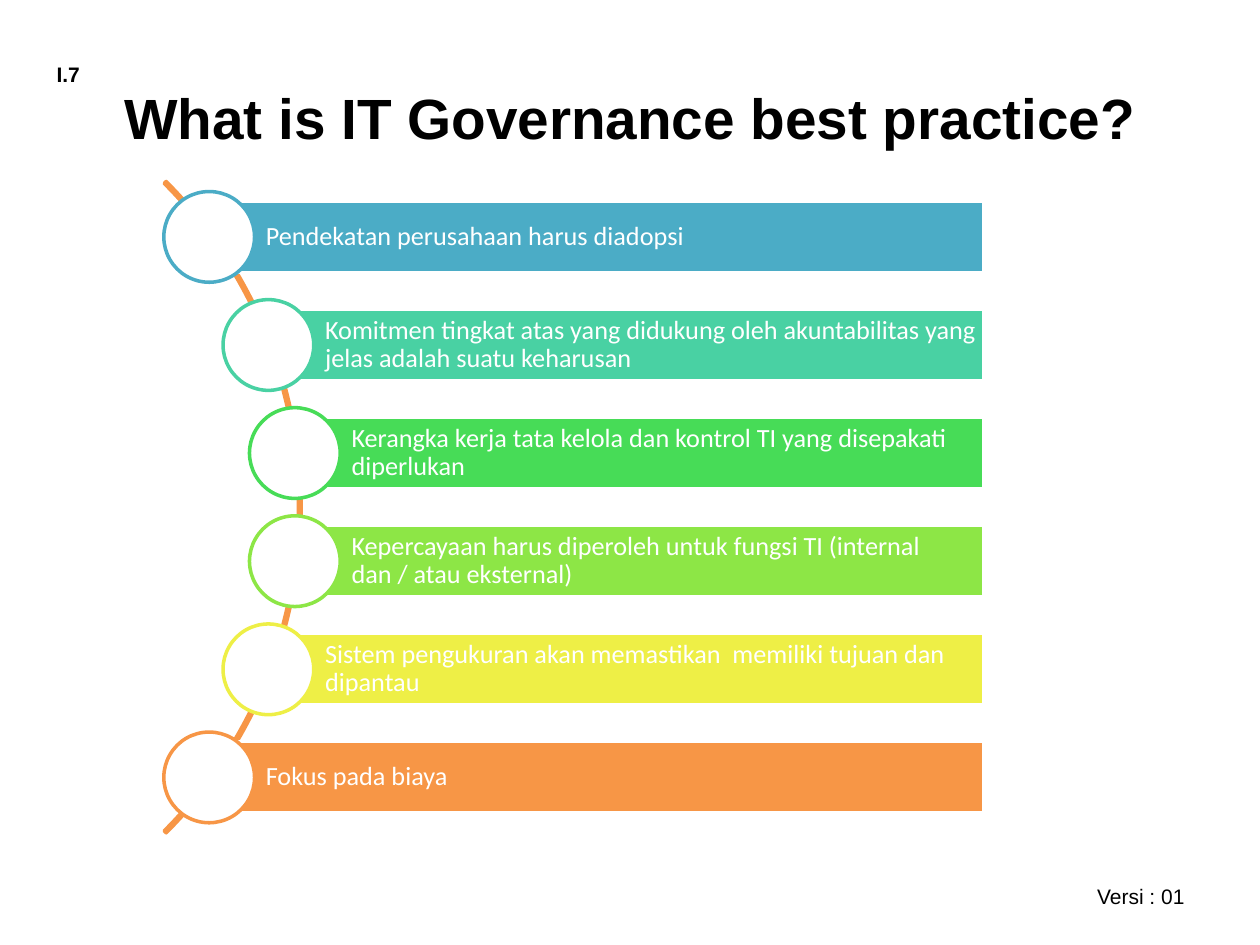
from dataclasses import dataclass

from pptx import Presentation
from pptx.dml.color import RGBColor
from pptx.enum.shapes import MSO_SHAPE as Preset
from pptx.enum.text import MSO_ANCHOR as Anchor, MSO_AUTO_SIZE as AutoSize, PP_ALIGN as Align
from pptx.shapes.autoshape import Shape
from pptx.slide import Slide
from pptx.util import Inches, Pt

BLACK = RGBColor(0x00, 0x00, 0x00)
WHITE = RGBColor(0xFF, 0xFF, 0xFF)
BLUE = RGBColor(0x4B, 0xAC, 0xC6)
TEAL = RGBColor(0x49, 0xD1, 0xA3)
GREEN = RGBColor(0x47, 0xDC, 0x57)
LIME = RGBColor(0x8D, 0xE6, 0x46)
YELLOW = RGBColor(0xEE, 0xEF, 0x46)
ORANGE = RGBColor(0xF7, 0x96, 0x46)

BAR_RIGHT = 7.81
BAR_HEIGHT = 0.57
CIRCLE_SIZE = 0.72
FIRST_CENTER = 1.88
LAST_CENTER = 6.17

LABEL_FONT = {"name": "Arial", "size": Pt(12), "bold": False}
HEADING_FONT = {"name": "Arial", "size": Pt(32.4), "bold": True}
PRACTICE_FONT = {"name": "Calibri", "size": Pt(15), "bold": False}
PRACTICE_FRAME = {
    "word_wrap": True,
    "vertical_anchor": Anchor.MIDDLE,
    "margin_left": Inches(0.45),
    "margin_top": Inches(0.04),
    "margin_right": Inches(0.04),
    "margin_bottom": Inches(0.04),
}


@dataclass
class Practice:
    text: str
    left: float
    color: RGBColor


PRACTICES = [
    Practice("Pendekatan perusahaan harus diadopsi", 1.66, BLUE),
    Practice("Komitmen tingkat atas yang didukung oleh akuntabilitas yang jelas adalah suatu keharusan", 2.13, TEAL),
    Practice("Kerangka kerja tata kelola dan kontrol TI yang disepakati diperlukan", 2.34, GREEN),
    Practice("Kepercayaan harus diperoleh untuk fungsi TI (internal dan / atau eksternal)", 2.34, LIME),
    Practice("Sistem pengukuran akan memastikan  memiliki tujuan dan dipantau", 2.13, YELLOW),
    Practice("Fokus pada biaya", 1.66, ORANGE),
]


def apply(target: object, values: dict) -> None:
    for key, value in values.items():
        setattr(target, key, value)


def place(shape: Shape, left: float, top: float, width: float, height: float) -> None:
    apply(shape, {"left": Inches(left), "top": Inches(top), "width": Inches(width), "height": Inches(height)})


def write(shape: Shape, text: str, font: dict, color: RGBColor, align: Align) -> None:
    paragraph = shape.text_frame.paragraphs[0]
    paragraph.alignment = align
    run = paragraph.add_run()
    run.text = text
    apply(run.font, font)
    run.font.color.rgb = color


def add_outlined(slide: Slide, preset: Preset, box: tuple, fill: RGBColor | None, line: RGBColor) -> Shape:
    shape = slide.shapes.add_shape(preset, *map(Inches, box))
    shape.shadow.inherit = False
    if fill is None:
        shape.fill.background()
    else:
        shape.fill.solid()
        shape.fill.fore_color.rgb = fill
    shape.line.color.rgb = line
    shape.line.width = Pt(2)
    return shape


def add_label(slide: Slide, text: str, box: tuple, font: dict, align: Align) -> None:
    label = slide.shapes.add_textbox(*map(Inches, box))
    label.text_frame.word_wrap = True
    write(label, text, font, BLACK, align)


def add_practice(slide: Slide, practice: Practice, center: float) -> None:
    bar_box = (practice.left, center - BAR_HEIGHT / 2, BAR_RIGHT - practice.left, BAR_HEIGHT)
    bar = add_outlined(slide, Preset.RECTANGLE, bar_box, practice.color, WHITE)
    apply(bar.text_frame, PRACTICE_FRAME)
    write(bar, practice.text, PRACTICE_FONT, WHITE, Align.LEFT)
    bar.text_frame.paragraphs[0].line_spacing = 0.9
    radius = CIRCLE_SIZE / 2
    circle_box = (practice.left - radius, center - radius, CIRCLE_SIZE, CIRCLE_SIZE)
    add_outlined(slide, Preset.OVAL, circle_box, WHITE, practice.color)


def main() -> None:
    deck = Presentation()
    apply(deck, {"slide_width": Inches(10), "slide_height": Inches(7.5)})
    slide = deck.slides.add_slide(deck.slide_layouts[5])

    heading = slide.shapes.title
    place(heading, 0.5, 0.3, 9, 1.25)
    apply(heading.text_frame, {"auto_size": AutoSize.NONE, "vertical_anchor": Anchor.MIDDLE})
    write(heading, "What is IT Governance best practice?", HEADING_FONT, BLACK, Align.CENTER)

    add_label(slide, "I.7", (0.35, 0.44, 1.81, 0.3), LABEL_FONT | {"bold": True}, Align.LEFT)
    add_label(slide, "Versi : 01", (7.17, 6.96, 2.33, 0.3), LABEL_FONT, Align.RIGHT)

    arc = add_outlined(slide, Preset.BLOCK_ARC, (-4.92, 0.37, 7.31, 7.31), None, ORANGE)
    for index, value in enumerate((189, 27, 0.003)):
        arc.adjustments[index] = value

    pitch = (LAST_CENTER - FIRST_CENTER) / (len(PRACTICES) - 1)
    for index, practice in enumerate(PRACTICES):
        add_practice(slide, practice, FIRST_CENTER + index * pitch)

    deck.save("out.pptx")


if __name__ == "__main__":
    main()
